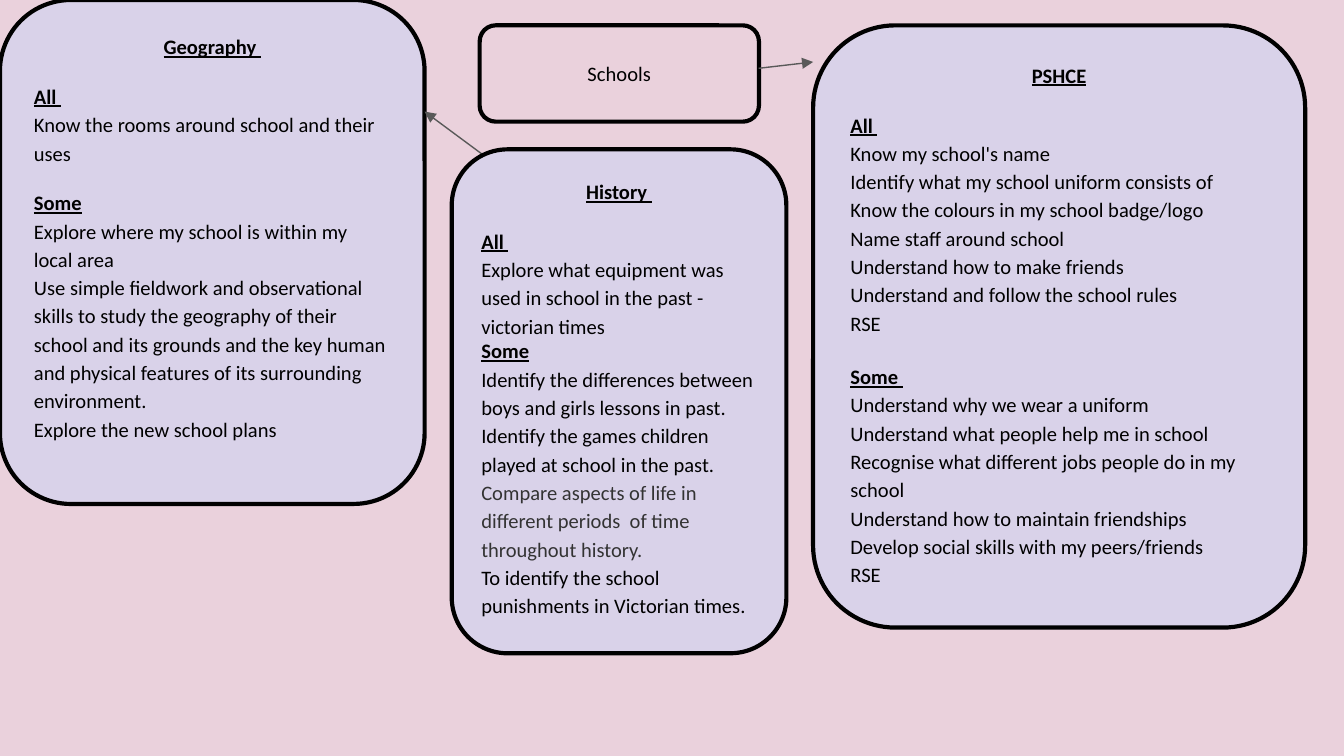
from lxml import etree
from pptx import Presentation
from pptx import util as u
from pptx.dml.color import RGBColor
from pptx.enum import shapes, text
from pptx.oxml.ns import qn

COLOURS = {"pink": "EAD1DC", "lilac": "D9D2E9", "black": "000000", "grey": "595959", "charcoal": "333333"}
FONT = {"name": "Calibri", "size": u.Pt(11)}
HEADING = {"bold": True, "underline": True}
GAP = 13.4

PSHCE = [
    ("All ", 0, [
        "Know my school's name",
        "Identify what my school uniform consists of",
        "Know the colours in my school badge/logo",
        "Name staff around school",
        "Understand how to make friends",
        "Understand and follow the school rules",
        "RSE",
    ]),
    ("Some ", 15.4, [
        "Understand why we wear a uniform",
        "Understand what people help me in school",
        "Recognise what different jobs people do in my school",
        "Understand how to maintain friendships",
        "Develop social skills with my peers/friends",
        "RSE",
    ]),
]
GEOGRAPHY = [
    ("All ", 0, ["Know the rooms around school and their uses"]),
    ("Some", GAP, [
        "Explore where my school is within my local area",
        "Use simple fieldwork and observational skills to study the geography of their school and its grounds "
        "and the key human and physical features of its surrounding environment.",
        "Explore the new school plans",
    ]),
]
COMPARE = "Compare aspects of life in different periods  of time throughout history."
HISTORY = [
    ("All ", 0, ["Explore what equipment was used in school in the past - victorian times"]),
    ("Some", 0, [
        "Identify the differences between boys and girls lessons in past.",
        "Identify the games children played at school in the past.",
        COMPARE,
        "To identify the school punishments in Victorian times.",
    ]),
]


def rgb(name):
    return RGBColor.from_string(COLOURS[name])


class Board:
    def __init__(self, prs):
        self.s = prs.slides.add_slide(prs.slide_layouts[6])
        fill = self.s.background.fill
        fill.solid()
        fill.fore_color.rgb = rgb("pink")

    def box(self, left, top, width, height, fill, anchor=text.MSO_ANCHOR.TOP):
        sp = self.s.shapes.add_shape(
            shapes.MSO_SHAPE.ROUNDED_RECTANGLE, *map(u.Pt, (left, top, width, height)))
        sp.adjustments[0] = 0.167
        sp.shadow.inherit = False
        sp.fill.solid()
        sp.fill.fore_color.rgb = rgb(fill)
        sp.line.color.rgb = rgb("black")
        sp.line.width = u.Pt(2.25)
        tf = sp.text_frame
        tf.word_wrap = True
        tf.vertical_anchor = anchor
        for side in ("left", "top", "right", "bottom"):
            setattr(tf, f"margin_{side}", u.Pt(7.2))
        return tf

    def label(self, p, words, colour="black", font=None, **layout):
        r = p.add_run()
        r.text = words
        for key, value in {**FONT, **(font or {})}.items():
            setattr(r.font, key, value)
        r.font.color.rgb = rgb(colour)
        for key, value in {"alignment": text.PP_ALIGN.LEFT, **layout}.items():
            setattr(p, key, value)

    def topic(self, left, top, width, height):
        tf = self.box(left, top, width, height, "pink", text.MSO_ANCHOR.MIDDLE)
        self.label(tf.paragraphs[0], "Schools", alignment=text.PP_ALIGN.CENTER)

    def subject(self, title, groups, left, top, width, height):
        tf = self.box(left, top, width, height, "lilac")
        self.label(tf.paragraphs[0], title, font=HEADING,
                   alignment=text.PP_ALIGN.CENTER, space_after=u.Pt(GAP))
        for heading, before, aims in groups:
            self.label(tf.add_paragraph(), heading, font=HEADING, space_before=u.Pt(before))
            for aim in aims:
                colour = "charcoal" if aim == COMPARE else "black"
                self.label(tf.add_paragraph(), aim, colour, line_spacing=1.15)

    def arrow(self, *ends):
        sp = self.s.shapes.add_connector(shapes.MSO_CONNECTOR.STRAIGHT, *map(u.Pt, ends))
        sp.line.color.rgb = rgb("grey")
        sp.line.width = u.Pt(0.75)
        ln = sp.get_or_add_ln()
        etree.SubElement(ln, qn("a:tailEnd"), type="triangle", w="med", len="med")
        etree.SubElement(ln.getparent(), qn("a:effectLst"))


def main():
    prs = Presentation()
    prs.slide_width, prs.slide_height = u.Pt(720), u.Pt(405)
    board = Board(prs)
    board.topic(257, 13.6, 149.6, 51.6)
    board.arrow(406.4, 36.6, 435.6, 33.2)
    board.subject("PSHCE", PSHCE, 435.6, 13.6, 263.6, 322.6)
    board.subject("Geography ", GEOGRAPHY, 0, 0, 227.5, 270)
    board.arrow(266.4, 88.6, 227.5, 59.8)
    board.subject("History ", HISTORY, 242, 80, 179.3, 270)
    prs.save("out.pptx")


if __name__ == "__main__":
    main()
